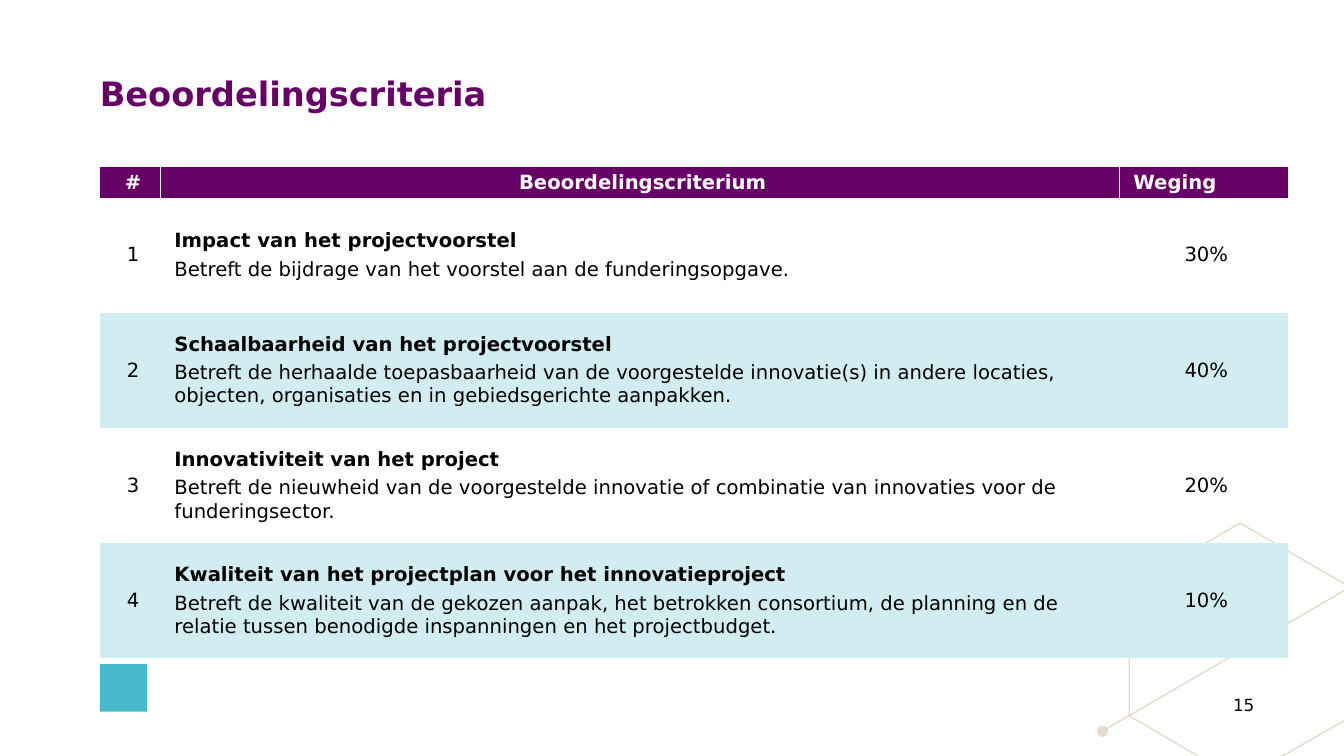
from lxml import etree
from pptx import Presentation
from pptx.dml.color import RGBColor
from pptx.enum.shapes import MSO_SHAPE
from pptx.enum.text import MSO_ANCHOR, PP_ALIGN
from pptx.oxml.ns import qn
from pptx.util import Inches, Pt

LEFT, CENTER = PP_ALIGN.LEFT, PP_ALIGN.CENTER
TOP, MIDDLE = MSO_ANCHOR.TOP, MSO_ANCHOR.MIDDLE
FONT = "DejaVu Sans"
COLORS = {"purple": "660066", "band": "D1EDF2", "teal": "48B9CA",
          "sand": "E4DCCA", "white": "FFFFFF", "black": "000000"}
NO_TABLE_STYLE = "{2D5ABB26-0587-4C30-8999-92F81FD0307C}"

HEADERS = [("#", CENTER), ("Beoordelingscriterium", CENTER), ("Weging", LEFT)]
CRITERIA = [
    ("Impact van het projectvoorstel",
     "Betreft de bijdrage van het voorstel aan de funderingsopgave.", "30%"),
    ("Schaalbaarheid van het projectvoorstel",
     "Betreft de herhaalde toepasbaarheid van de voorgestelde innovatie(s) in andere "
     "locaties, objecten, organisaties en in gebiedsgerichte aanpakken.", "40%"),
    ("Innovativiteit van het project",
     "Betreft de nieuwheid van de voorgestelde innovatie of combinatie van innovaties "
     "voor de funderingsector.", "20%"),
    ("Kwaliteit van het projectplan voor het innovatieproject",
     "Betreft de kwaliteit van de gekozen aanpak, het betrokken consortium, de planning "
     "en de relatie tussen benodigde inspanningen en het projectbudget.", "10%"),
]


def rgb(name):
    return RGBColor.from_string(COLORS[name])


def add_run(p, text, size, color="black", bold=False):
    r = p.add_run()
    r.text = text
    r.font.name, r.font.size, r.font.bold = FONT, Pt(size), bold
    r.font.color.rgb = rgb(color)


def clear_margins(tf):
    tf.margin_left = tf.margin_right = tf.margin_top = tf.margin_bottom = 0
    tf.word_wrap = True
    tf.vertical_anchor = TOP


def fill_plain(sp, color):
    sp.shadow.inherit = False
    sp.fill.solid()
    sp.fill.fore_color.rgb = rgb(color)
    sp.line.fill.background()


def add_hexagon(s, x, y):
    """Hexagon outline with spokes, running off the slide's corner."""
    lines = [
        [(2.45, 0.6), (1.42, 0), (0.32, 0.64), (0.32, 1.91), (1, 2.31)],
        [(0.06, 2.06), (1.42, 1.27), (2.45, 0.67)],
        [(1.84, 2.31), (2.45, 1.96)],
    ]
    for line in lines:
        points = [(Inches(x + dx), Inches(y + dy)) for dx, dy in line]
        builder = s.shapes.build_freeform(*points[0], scale=1.0)
        builder.add_line_segments(points[1:], close=False)
        sp = builder.convert_to_shape()
        sp.shadow.inherit = False
        sp.fill.background()
        sp.line.color.rgb = rgb("sand")
        sp.line.width = Pt(1)
    fill_plain(s.shapes.add_shape(MSO_SHAPE.OVAL, Inches(x), Inches(y + 2.01),
                                  Inches(0.11), Inches(0.11)), "sand")


def add_logo_block(s, x, y, size):
    fill_plain(s.shapes.add_shape(MSO_SHAPE.RECTANGLE, Inches(x), Inches(y),
                                  Inches(size), Inches(size)), "teal")


def set_title(s, x, y, w, h):
    sp = s.shapes.title
    sp.left, sp.top, sp.width, sp.height = map(Inches, (x, y, w, h))
    clear_margins(sp.text_frame)
    p = sp.text_frame.paragraphs[0]
    p.alignment = LEFT
    add_run(p, "Beoordelingscriteria", 24, "purple", True)


def add_page_number(s, x, y, w, h):
    sp = s.shapes.add_textbox(*map(Inches, (x, y, w, h)))
    clear_margins(sp.text_frame)
    add_run(sp.text_frame.paragraphs[0], "15", 12)


def set_cell(cell, texts, align, fill=None, color="black"):
    """texts holds one (text, bold) pair for each paragraph."""
    cell.margin_left, cell.margin_right = Inches(0.14), Inches(0.08)
    cell.margin_top = cell.margin_bottom = 0
    cell.vertical_anchor = MIDDLE
    if fill:
        cell.fill.solid()
        cell.fill.fore_color.rgb = rgb(fill)
    else:
        cell.fill.background()
    tf = cell.text_frame
    for i, (text, bold) in enumerate(texts):
        p = tf.add_paragraph() if i else tf.paragraphs[0]
        p.alignment = align
        p.space_before = Pt(2 if i else 0)
        p.space_after = Pt(2)
        add_run(p, text, 14, color, bold)


def add_borders(cell, tags):
    tcPr = cell._tc.get_or_add_tcPr()
    for i, tag in enumerate(tags):
        ln = etree.Element(qn(tag), w=str(Pt(0.5)))
        fill = etree.SubElement(ln, qn("a:solidFill"))
        etree.SubElement(fill, qn("a:srgbClr"), val=COLORS["white"])
        tcPr.insert(i, ln)


def add_criteria_table(s, x, y, w, h):
    header_h, number_w, weight_w = 0.3, 0.6, 1.67
    rows = len(CRITERIA) + 1
    table = s.shapes.add_table(rows, 3, *map(Inches, (x, y, w, h))).table
    table.first_row = table.horz_banding = False
    table._tbl.tblPr.find(qn("a:tableStyleId")).text = NO_TABLE_STYLE
    for col, width in zip(table.columns, (number_w, w - number_w - weight_w, weight_w)):
        col.width = Inches(width)
    for i, row in enumerate(table.rows):
        row.height = Inches((h - header_h) / len(CRITERIA) if i else header_h)

    # Header row
    borders = [["a:lnR"], ["a:lnL", "a:lnR"], ["a:lnL"]]
    for i, (text, align) in enumerate(HEADERS):
        set_cell(table.cell(0, i), [(text, True)], align, "purple", "white")
        add_borders(table.cell(0, i), borders[i])

    # Criteria, every second one banded
    for n, (name, description, weight) in enumerate(CRITERIA, 1):
        fill = None if n % 2 else "band"
        set_cell(table.cell(n, 0), [(str(n), False)], CENTER, fill)
        set_cell(table.cell(n, 1), [(name, True), (description, False)], LEFT, fill)
        set_cell(table.cell(n, 2), [(weight, False)], CENTER, fill)


def main():
    prs = Presentation()
    prs.slide_width, prs.slide_height = Inches(13.33), Inches(7.5)
    s = prs.slides.add_slide(prs.slide_layouts[5])
    add_hexagon(s, 10.88, 5.19)
    add_logo_block(s, 0.99, 6.59, 0.47)
    set_title(s, 0.99, 0.72, 11.22, 0.94)
    add_page_number(s, 12.23, 6.89, 0.43, 0.28)
    add_criteria_table(s, 0.99, 1.66, 11.78, 4.87)
    prs.save("out.pptx")


if __name__ == "__main__":
    main()
